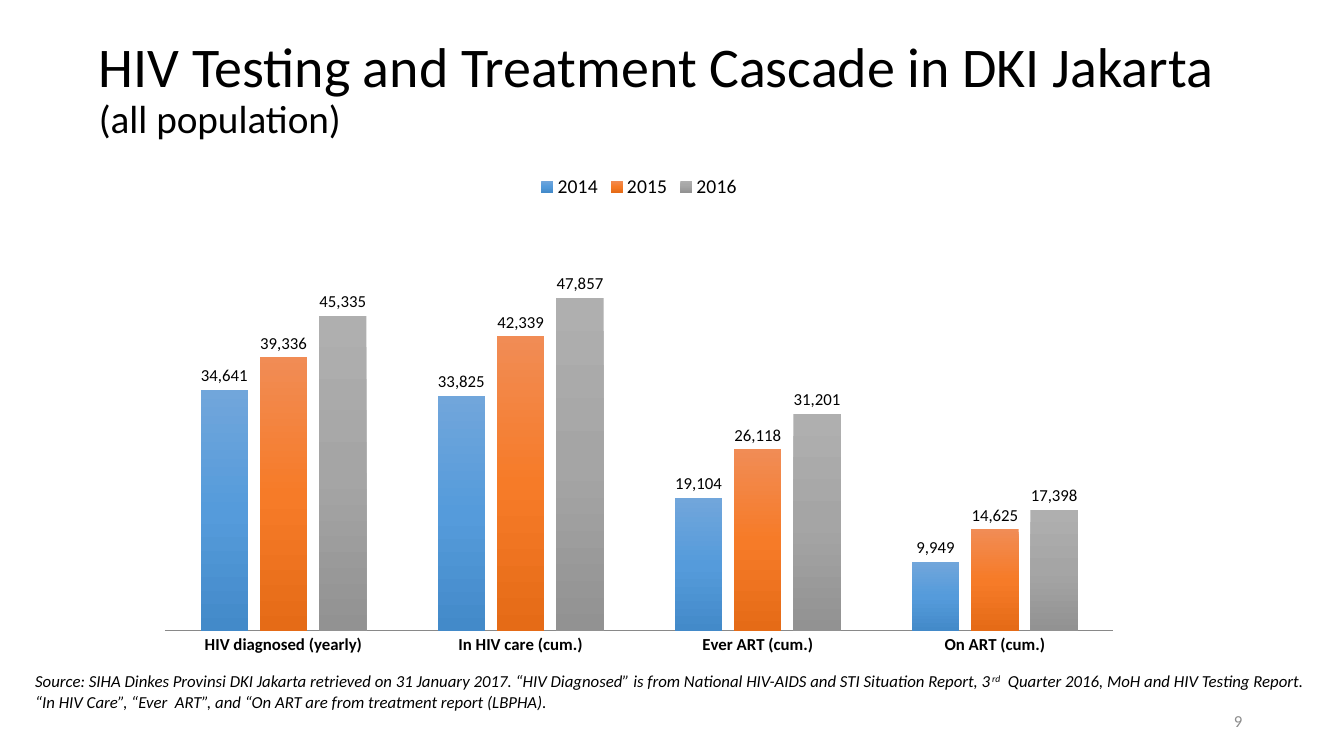
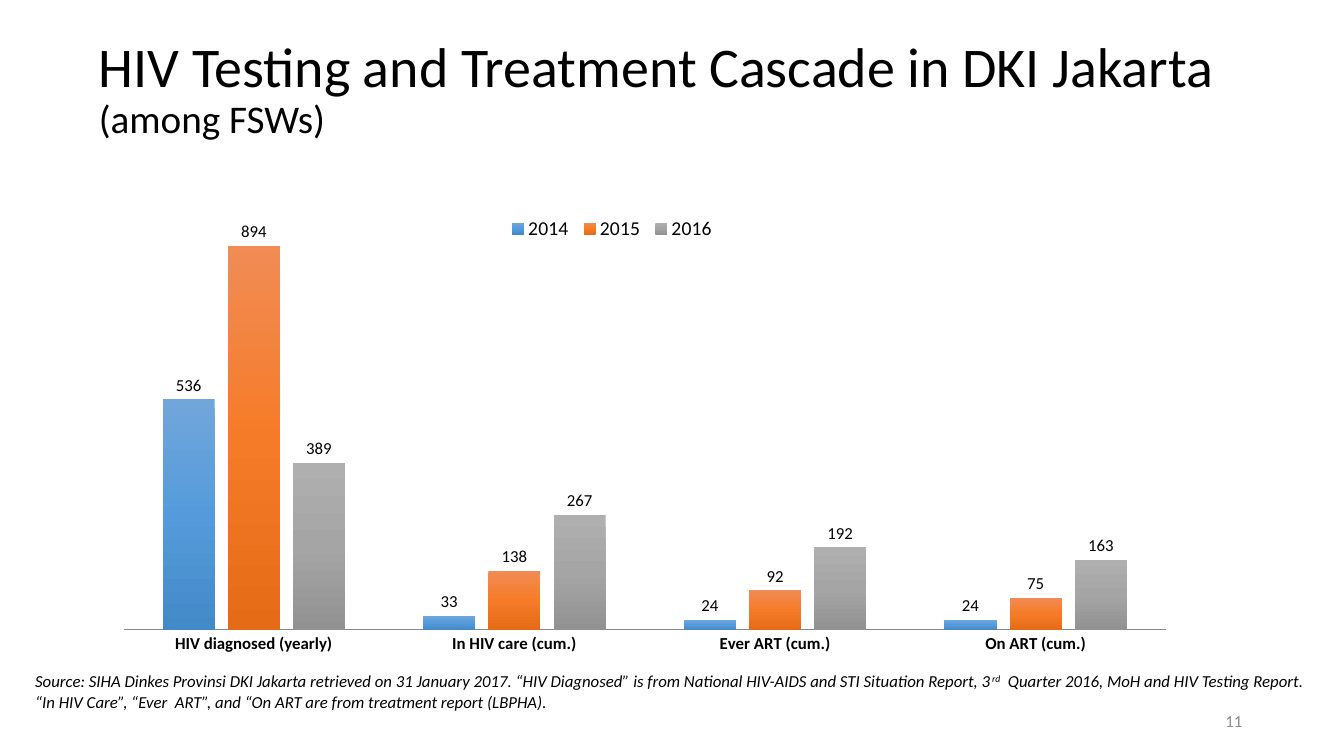
from copy import deepcopy

from lxml import etree
from pptx import Presentation
from pptx.chart.data import CategoryChartData
from pptx.dml.color import RGBColor
from pptx.enum import chart as charts, text
from pptx.oxml import ns
from pptx.util import Inches, Pt

FONT = "Calibri"
BLACK = RGBColor(0x00, 0x00, 0x00)
PAGE_GRAY = RGBColor(0x8C, 0x8C, 0x8C)
AXIS_GRAY = RGBColor(0x89, 0x89, 0x89)
BLUES = [RGBColor(0x71, 0xA6, 0xDB), RGBColor(0x55, 0x9B, 0xDB), RGBColor(0x43, 0x8A, 0xC9)]
ORANGES = [RGBColor(0xF1, 0x8C, 0x55), RGBColor(0xF6, 0x7B, 0x28), RGBColor(0xE5, 0x6B, 0x17)]
GRAYS = [RGBColor(0xAF, 0xAF, 0xAF), RGBColor(0xA5, 0xA5, 0xA5), RGBColor(0x92, 0x92, 0x92)]
GRADIENTS = [BLUES, ORANGES, GRAYS]

TITLE = "HIV Testing and Treatment Cascade in DKI Jakarta "
YEARS = ["2014", "2015", "2016"]
STAGES = ["HIV diagnosed (yearly)", "In HIV care (cum.)", "Ever ART (cum.)", "On ART (cum.)"]
NUMBER_FORMAT = "#,##0"
PLOT_LAYOUT = (0.02, 0.1, 0.96, 0.83)
SOURCE_PARTS = [
    ("Source: SIHA Dinkes Provinsi DKI Jakarta retrieved on 31 January 2017. “HIV Diagnosed” "
     "is from National HIV-AIDS and STI Situation Report, 3", False),
    ("rd", True),
    ("  Quarter 2016, MoH and HIV Testing Report. “In HIV Care”, “Ever  ART”, "
     "and “On ART are from treatment report (LBPHA).", False),
]

CASCADES = [
    {
        "population": "(all population)",
        "page": "9",
        "box": (1.44, 1.62, 9.8, 4.99),
        "maximum": 60000,
        "legend_layout": None,
        "values": [
            (34641, 33825, 19104, 9949),
            (39336, 42339, 26118, 14625),
            (45335, 47857, 31201, 17398),
        ],
    },
    {
        "population": "(among FSWs)",
        "page": "11",
        "box": (1.01, 1.47, 10.77, 5.14),
        "maximum": 1000,
        "legend_layout": (0.37, 0.12, 0.2, 0.07),
        "values": [
            (536, 33, 24, 24),
            (894, 138, 92, 75),
            (389, 267, 192, 163),
        ],
    },
]


def inches(box):
    return [Inches(length) for length in box]


def style_font(font, size, color=BLACK):
    font.name = FONT
    font.size = Pt(size)
    font.color.rgb = color


def add_title(slide, population):
    title = slide.shapes.title
    title.left, title.top, title.width, title.height = inches((0.88, 0, 11.71, 1.79))
    frame = title.text_frame
    frame.text = f"{TITLE}\v{population}"
    frame.auto_size = text.MSO_AUTO_SIZE.NONE
    frame.vertical_anchor = text.MSO_ANCHOR.MIDDLE
    paragraph = frame.paragraphs[0]
    paragraph.alignment = text.PP_ALIGN.LEFT
    paragraph.line_spacing = 0.9
    for run, size in zip(paragraph.runs, (40, 28)):
        style_font(run.font, size)


def add_text_frame(slide, box):
    frame = slide.shapes.add_textbox(*inches(box)).text_frame
    frame.word_wrap = True
    return frame


def add_source(slide):
    frame = add_text_frame(slide, (0.25, 6.61, 12.88, 0.5))
    frame.auto_size = text.MSO_AUTO_SIZE.SHAPE_TO_FIT_TEXT
    for wording, raised in SOURCE_PARTS:
        run = frame.paragraphs[0].add_run()
        run.text = wording
        style_font(run.font, 12)
        run.font.italic = True
        if raised:
            run._r.get_or_add_rPr().set("baseline", "30000")


def add_page_number(slide, number):
    frame = add_text_frame(slide, (9.42, 6.95, 3, 0.4))
    frame.vertical_anchor = text.MSO_ANCHOR.MIDDLE
    frame.text = number
    paragraph = frame.paragraphs[0]
    paragraph.alignment = text.PP_ALIGN.RIGHT
    style_font(paragraph.runs[0].font, 12, PAGE_GRAY)


def set_layout(element, position, fractions, inner=False):
    for existing in element.findall(ns.qn("c:layout")):
        element.remove(existing)
    layout = etree.Element(ns.qn("c:layout"))
    manual = etree.SubElement(layout, ns.qn("c:manualLayout"))
    settings = [("layoutTarget", "inner")] if inner else []
    settings += [("xMode", "edge"), ("yMode", "edge")]
    settings += zip("xywh", fractions)
    for name, value in settings:
        etree.SubElement(manual, ns.qn(f"c:{name}")).set("val", str(value))
    element.insert(position, layout)


def fill_gradient(series, colors):
    fill = series.format.fill
    fill.gradient()
    fill.gradient_angle = 270
    stop_list = next(series._element.iter(ns.qn("a:gsLst")))
    stop_list.append(deepcopy(stop_list[-1]))
    for index, (stop, color) in enumerate(zip(fill.gradient_stops, colors)):
        stop.color.rgb = color
        stop.position = index / (len(colors) - 1)


def format_axes(chart, maximum):
    category_axis = chart.category_axis
    category_axis.major_tick_mark = charts.XL_TICK_MARK.NONE
    category_axis.has_major_gridlines = False
    category_axis.format.line.color.rgb = AXIS_GRAY
    style_font(category_axis.tick_labels.font, 12)
    category_axis.tick_labels.font.bold = True
    value_axis = chart.value_axis
    value_axis.minimum_scale = 0
    value_axis.maximum_scale = maximum
    value_axis.has_major_gridlines = False
    value_axis.visible = False


def format_legend(chart, layout):
    chart.has_legend = True
    legend = chart.legend
    legend.position = charts.XL_LEGEND_POSITION.TOP
    legend.include_in_layout = False
    style_font(legend.font, 14)
    if layout:
        set_layout(legend._element, 1, layout)


def format_columns(plot):
    plot.gap_width = 150
    plot.overlap = -25
    plot.vary_by_categories = False
    plot.has_data_labels = True
    labels = plot.data_labels
    labels.show_value = True
    labels.number_format = NUMBER_FORMAT
    labels.number_format_is_linked = False
    labels.position = charts.XL_LABEL_POSITION.OUTSIDE_END
    style_font(labels.font, 12)
    for series, colors in zip(plot.series, GRADIENTS):
        fill_gradient(series, colors)


def add_cascade_chart(slide, cascade):
    data = CategoryChartData(number_format=NUMBER_FORMAT)
    data.categories = STAGES
    for year, values in zip(YEARS, cascade["values"]):
        data.add_series(year, values)
    chart = slide.shapes.add_chart(
        charts.XL_CHART_TYPE.COLUMN_CLUSTERED, *inches(cascade["box"]), data
    ).chart
    chart.has_title = False
    style_font(chart.font, 12)
    format_axes(chart, cascade["maximum"])
    format_legend(chart, cascade["legend_layout"])
    format_columns(chart.plots[0])
    plot_area = next(chart._chartSpace.iter(ns.qn("c:plotArea")))
    set_layout(plot_area, 0, PLOT_LAYOUT, inner=True)


def add_cascade_slide(presentation, cascade):
    slide = presentation.slides.add_slide(presentation.slide_layouts[5])
    add_title(slide, cascade["population"])
    add_cascade_chart(slide, cascade)
    add_source(slide)
    add_page_number(slide, cascade["page"])


def main():
    presentation = Presentation()
    presentation.slide_width = Inches(13.33)
    presentation.slide_height = Inches(7.5)
    for cascade in CASCADES:
        add_cascade_slide(presentation, cascade)
    presentation.save("out.pptx")


if __name__ == "__main__":
    main()
